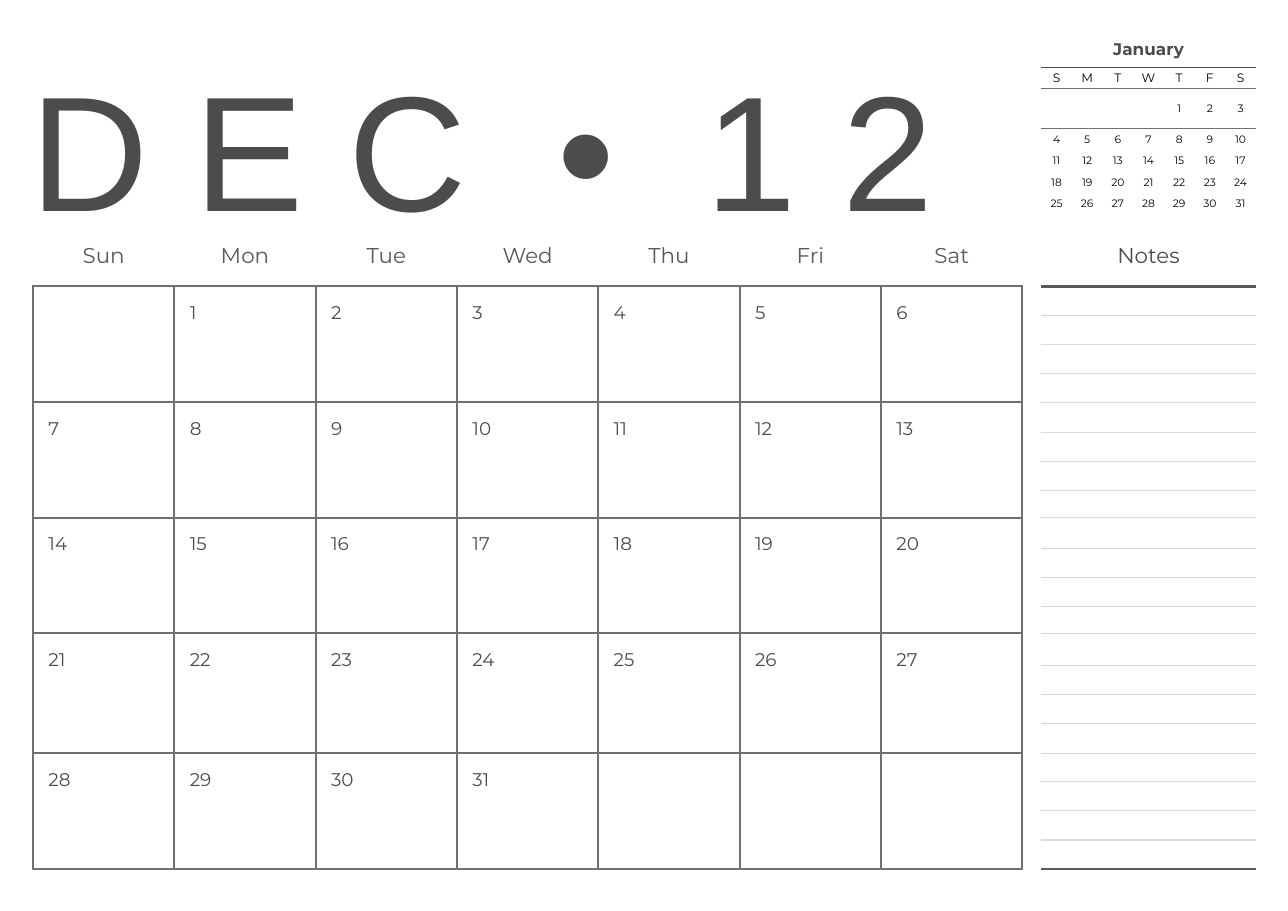
from dataclasses import dataclass
from itertools import accumulate

import pptx
import pptx.dml.color
import pptx.enum.shapes
import pptx.enum.text
import pptx.oxml
import pptx.oxml.ns
import pptx.util
from pptx.util import Inches

COLORS = {"ink": "4C4C4C", "label": "595959", "grid": "707070", "rule": "D9D9D9", "black": "000000"}
CENTER = pptx.enum.text.PP_ALIGN.CENTER
LEFT = pptx.enum.text.PP_ALIGN.LEFT
TOP = pptx.enum.text.MSO_ANCHOR.TOP
MIDDLE = pptx.enum.text.MSO_ANCHOR.MIDDLE
NO_STYLE = "{2D5ABB26-0587-4C30-8999-92F81FD0307C}"

DAYS = ["Sun", "Mon", "Tue", "Wed", "Thu", "Fri", "Sat"]
MONTH_LEFT, MONTH_TOP, DAY_W = 0.3, 2.6, 8.98 / 7
WEEK_HEIGHTS = [1.05, 1.05, 1.05, 1.09, 1.05]
NOTES_LEFT, NOTES_W, LINES_PER_WEEK = 9.45, 1.95, 4
MINI_TOP, MINI_ROW = 0.61, 1.18 / 6


@dataclass
class Label:
    text: str
    left: float
    top: float
    width: float
    height: float
    size: float = 14
    color: str = "ink"
    font: str = "Montserrat"
    bold: bool = False
    align: int = CENTER
    inset_top: float = 0


@dataclass
class Grid:
    left: float
    top: float
    col_w: float
    heights: list[float]
    rows: list[list[str]]
    sizes: list[float]
    color: str
    align: int
    anchor: int
    insets: tuple[float, float, float, float]


def set_all(obj: object, values: dict) -> None:
    for name, value in values.items():
        setattr(obj, name, value)


def add_run(p, text: str, size: float, color: str, font: str, bold: bool = False) -> None:
    r = p.add_run()
    r.text = text
    set_all(r.font, {"size": pptx.util.Pt(size), "name": font, "bold": bold})
    r.font.color.rgb = pptx.dml.color.RGBColor.from_string(COLORS[color])


def add_label(s, label: Label) -> None:
    box = s.shapes.add_textbox(*map(Inches, (label.left, label.top, label.width, label.height)))
    tf = box.text_frame
    set_all(tf, {"margin_left": 0, "margin_top": Inches(label.inset_top), "margin_right": 0,
                 "margin_bottom": 0, "word_wrap": True})
    p = tf.paragraphs[0]
    p.alignment = label.align
    add_run(p, label.text, label.size, label.color, label.font, label.bold)


def add_rule(s, y: float, color: str, width: float) -> None:
    """Draw one writing line across the notes column."""
    line = s.shapes.add_connector(
        pptx.enum.shapes.MSO_CONNECTOR.STRAIGHT,
        *map(Inches, (NOTES_LEFT, y, NOTES_LEFT + NOTES_W, y)))
    line.line.color.rgb = pptx.dml.color.RGBColor.from_string(COLORS[color])
    line.line.width = pptx.util.Pt(width)
    line._element.spPr.append(pptx.oxml.parse_xml(
        f"<a:effectLst {pptx.oxml.ns.nsdecls('a')}/>"))


def set_borders(cell, borders: dict[str, str], width: float) -> None:
    """Set borders, keyed by side in the order L, R, T, B, ahead of the cell's fill."""
    tc_pr = cell._tc.get_or_add_tcPr()
    for i, (side, color) in enumerate(borders.items()):
        tc_pr.insert(i, pptx.oxml.parse_xml(
            f"<a:ln{side} {pptx.oxml.ns.nsdecls('a')} w=\"{pptx.util.Pt(width)}\">"
            f"<a:solidFill><a:srgbClr val=\"{COLORS[color]}\"/></a:solidFill></a:ln{side}>"))


def add_grid(s, g: Grid):
    n_cols = len(g.rows[0])
    frame = s.shapes.add_table(len(g.rows), n_cols, *map(
        Inches, (g.left, g.top, g.col_w * n_cols, sum(g.heights))))
    table = frame.table
    set_all(table, {"first_row": False, "horz_banding": False})
    table._tbl.tblPr.find(pptx.oxml.ns.qn("a:tableStyleId")).text = NO_STYLE
    for col in table.columns:
        col.width = Inches(g.col_w)
    sides = ("margin_left", "margin_top", "margin_right", "margin_bottom")
    cell_format = dict(zip(sides, map(Inches, g.insets))) | {"vertical_anchor": g.anchor}
    for i, (texts, height, size) in enumerate(zip(g.rows, g.heights, g.sizes)):
        table.rows[i].height = Inches(height)
        for j, text in enumerate(texts):
            cell = table.cell(i, j)
            set_all(cell, cell_format)
            cell.fill.background()
            if text:
                p = cell.text_frame.paragraphs[0]
                p.alignment = g.align
                add_run(p, text, size, g.color, "Montserrat")
    return table


def month_weeks(first_col: int, n_days: int = 31) -> list[list[str]]:
    """Lay out the day numbers in five weeks, starting at the given weekday."""
    days = range(1 - first_col, 36 - first_col)
    cells = [str(d) if 1 <= d <= n_days else "" for d in days]
    return [cells[i:i + 7] for i in range(0, 35, 7)]


def add_notes(s) -> None:
    """Rule four lines a week, so that every fourth one meets the month grid."""
    add_label(s, Label("Notes", NOTES_LEFT, 2.2, NOTES_W, 0.24))
    week_tops = list(accumulate(WEEK_HEIGHTS, initial=MONTH_TOP))
    last = LINES_PER_WEEK * len(WEEK_HEIGHTS)
    step = (week_tops[-1] - MONTH_TOP) / last
    for i in range(last + 1):
        week, rest = divmod(i, LINES_PER_WEEK)
        y = MONTH_TOP + i * step if rest else week_tops[week]
        color, width = ("label", 1.5) if i in (0, last) else ("rule", 0.75)
        add_rule(s, y, color, width)


def add_next_month(s) -> None:
    add_label(s, Label("January", NOTES_LEFT, 0.35, NOTES_W, 0.19, size=11, bold=True))
    heights = [MINI_ROW, 0.35] + [MINI_ROW] * 4
    table = add_grid(s, Grid(
        NOTES_LEFT, MINI_TOP, NOTES_W / 7, heights, [[d[0] for d in DAYS]] + month_weeks(4),
        [8] + [7] * 5, "black", CENTER, MIDDLE, (0.03,) * 4))
    for j in range(len(DAYS)):
        set_borders(table.cell(0, j), {"T": "ink", "B": "grid"}, 0.75)
        set_borders(table.cell(1, j), {"T": "grid"}, 0.75)


def add_month(s) -> None:
    add_label(s, Label("D E C  •  1 2", 0.28, 0.3, 8.99, 1.8, size=107, font="Arial",
                       align=LEFT, inset_top=0.13))
    for j, day in enumerate(DAYS):
        add_label(s, Label(day, MONTH_LEFT + j * DAY_W, 2.2, DAY_W, 0.24, color="label"))
    table = add_grid(s, Grid(
        MONTH_LEFT, MONTH_TOP, DAY_W, WEEK_HEIGHTS, month_weeks(1), [12] * 5, "ink",
        LEFT, TOP, (0.14, 0.14, 0.1, 0.1)))
    for cell in table.iter_cells():
        set_borders(cell, dict.fromkeys("LRTB", "grid"), 1.5)


def main() -> None:
    prs = pptx.Presentation()
    set_all(prs, {"slide_width": Inches(11.69), "slide_height": Inches(8.27)})
    s = prs.slides.add_slide(prs.slide_layouts[6])
    add_notes(s)
    add_next_month(s)
    add_month(s)
    prs.save("out.pptx")


if __name__ == "__main__":
    main()
